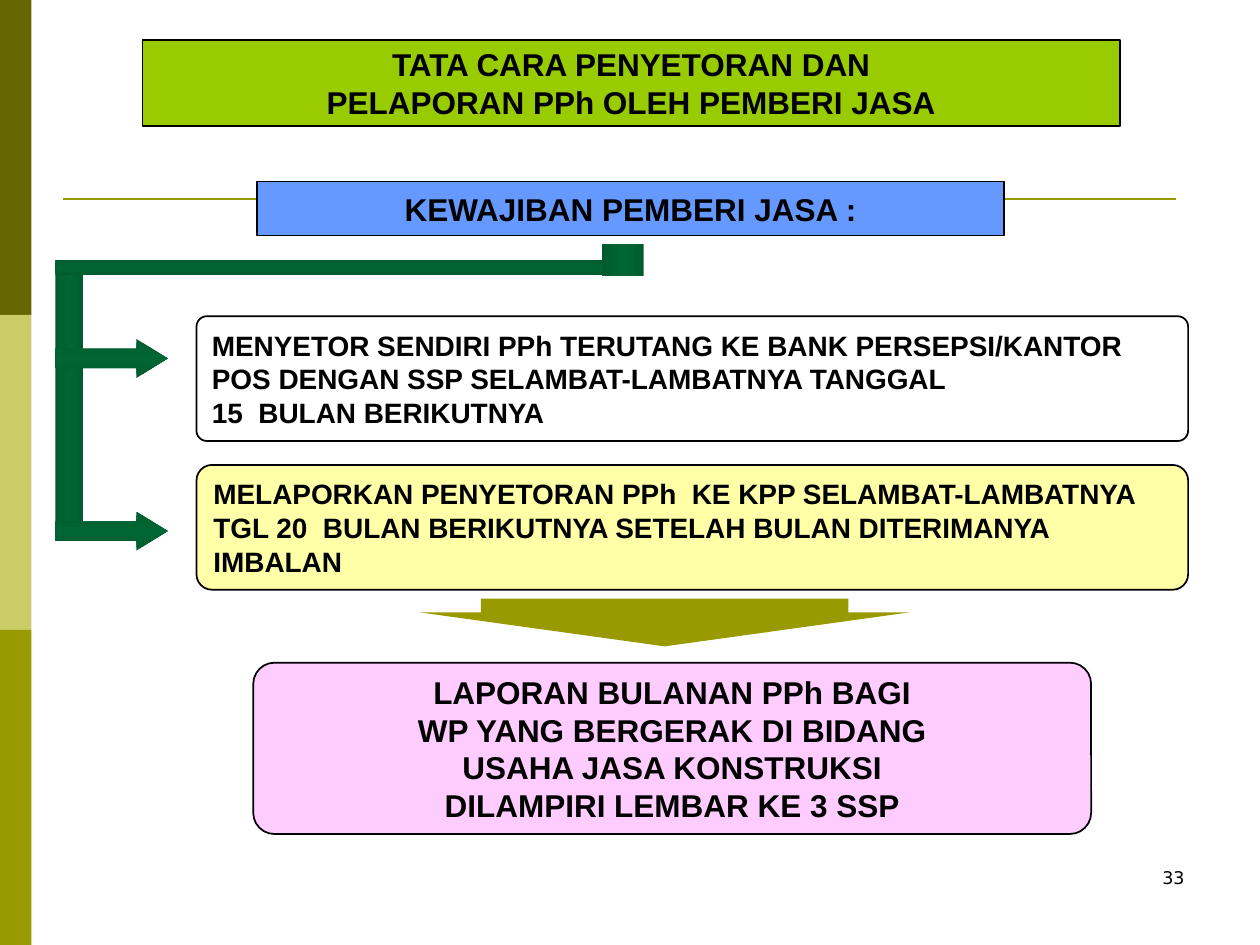
from copy import deepcopy

from lxml import etree
from pptx import Presentation
from pptx.dml.color import RGBColor
from pptx.enum.shapes import MSO_CONNECTOR, MSO_SHAPE
from pptx.enum.text import MSO_ANCHOR, MSO_AUTO_SIZE, PP_ALIGN
from pptx.oxml.ns import qn
from pptx.util import Inches, Pt

RECT = MSO_SHAPE.RECTANGLE
ROUNDED = MSO_SHAPE.ROUNDED_RECTANGLE
RIGHT_ARROW = MSO_SHAPE.RIGHT_ARROW
DOWN_ARROW = MSO_SHAPE.DOWN_ARROW
STRAIGHT = MSO_CONNECTOR.STRAIGHT
TOP, MIDDLE = MSO_ANCHOR.TOP, MSO_ANCHOR.MIDDLE
NO_AUTOFIT = MSO_AUTO_SIZE.NONE
LEFT, CENTER, RIGHT = PP_ALIGN.LEFT, PP_ALIGN.CENTER, PP_ALIGN.RIGHT

BLACK = RGBColor(0x00, 0x00, 0x00)
WHITE = RGBColor(0xFF, 0xFF, 0xFF)
DARK_OLIVE = RGBColor(0x66, 0x66, 0x00)
PALE_OLIVE = RGBColor(0xCC, 0xCC, 0x66)
OLIVE = RGBColor(0x99, 0x99, 0x00)
LIME = RGBColor(0x99, 0xCC, 0x00)
BLUE = RGBColor(0x66, 0x99, 0xFF)
YELLOW = RGBColor(0xFF, 0xFF, 0xA8)
PINK = RGBColor(0xFF, 0xCC, 0xFF)
GREEN_EDGE = RGBColor(0x00, 0x5C, 0x2E)
GREEN_MIDDLE = RGBColor(0x00, 0x66, 0x33)


class SlideBuilder:
    """Adds elements in the deck's style to one slide."""

    font = "Arial"
    number_font = "DejaVu Sans"

    def __init__(self, slide):
        self.slide = slide

    def set_text(self, shape, text, size, align, font=font, bold=True, anchor=MIDDLE):
        frame = shape.text_frame
        frame.text = text
        frame.word_wrap = True
        frame.auto_size = NO_AUTOFIT
        frame.vertical_anchor = anchor
        frame.margin_left = frame.margin_right = Inches(0.1)
        frame.margin_top = frame.margin_bottom = Inches(0.05)
        for paragraph in frame.paragraphs:
            paragraph.alignment = align
            for run in paragraph.runs:
                run.font.name = font
                run.font.size = Pt(size)
                run.font.bold = bold
                run.font.color.rgb = BLACK

    def fill_and_outline(self, shape, fill):
        shape.fill.solid()
        shape.fill.fore_color.rgb = fill
        shape.line.color.rgb = BLACK
        shape.line.width = Pt(1)

    def title(self, text, box, fill):
        title = self.slide.shapes.title
        title.left, title.top, title.width, title.height = map(Inches, box)
        self.fill_and_outline(title, fill)
        self.set_text(title, text, 18, CENTER)

    def plain(self, kind, box, fill=None, adjustments=(), parent=None):
        """Add a borderless shape to the parent group or to the slide."""
        shape = (parent or self.slide).shapes.add_shape(kind, *map(Inches, box))
        shape.shadow.inherit = False
        shape.line.fill.background()
        for index, value in enumerate(adjustments):
            shape.adjustments[index] = value
        if fill is not None:
            shape.fill.solid()
            shape.fill.fore_color.rgb = fill
        return shape

    def text_box(self, kind, box, fill, text, size, align, adjustments=()):
        shape = self.plain(kind, box, adjustments=adjustments)
        self.fill_and_outline(shape, fill)
        self.set_text(shape, text, size, align)

    def green_part(self, group, kind, box, angle, adjustments=()):
        """Add a bar or arrow that is lighter along its middle."""
        shape = self.plain(kind, box, adjustments=adjustments, parent=group)
        shape.fill.gradient()
        shape.fill.gradient_angle = angle
        stop_list = shape.element.spPr.find(qn("a:gradFill")).find(qn("a:gsLst"))
        stop_list.insert(1, deepcopy(stop_list[0]))
        stops = zip(shape.fill.gradient_stops, (0, 0.5, 1), (GREEN_EDGE, GREEN_MIDDLE, GREEN_EDGE))
        for stop, position, color in stops:
            stop.position = position
            stop.color.rgb = color

    def rule(self, start_x, end_x, y, color):
        line = self.slide.shapes.add_connector(
            STRAIGHT, Inches(start_x), Inches(y), Inches(end_x), Inches(y))
        line.line.color.rgb = color
        line.line.width = Pt(1.5)
        etree.SubElement(line.element.spPr, qn("a:effectLst"))

    def page_number(self, text, box):
        number = self.slide.shapes.add_textbox(*map(Inches, box))
        self.set_text(number, text, 10, RIGHT, self.number_font, False, TOP)


def main():
    deck = Presentation()
    deck.slide_width, deck.slide_height = Inches(10), Inches(7.5)
    title_only = deck.slide_layouts[5]
    builder = SlideBuilder(deck.slides.add_slide(title_only))

    for row, color in enumerate((DARK_OLIVE, PALE_OLIVE, OLIVE)):
        builder.plain(RECT, (0, row * 2.5, 0.25, 2.5), color)
    builder.rule(0.5, 9.33, 1.58, OLIVE)
    builder.page_number("33", (7.17, 6.83, 2.33, 0.5))

    duties = (
        (2.51, 0.083, WHITE,
         "MENYETOR SENDIRI PPh TERUTANG KE BANK PERSEPSI/KANTOR\n"
         "POS DENGAN SSP SELAMBAT-LAMBATNYA TANGGAL\n"
         "15  BULAN BERIKUTNYA"),
        (3.69, 0.124, YELLOW,
         "MELAPORKAN PENYETORAN PPh  KE KPP SELAMBAT-LAMBATNYA\n"
         "TGL 20  BULAN BERIKUTNYA SETELAH BULAN DITERIMANYA\n"
         "IMBALAN"),
    )
    for top, rounding, fill, duty in duties:
        builder.text_box(ROUNDED, (1.56, top, 7.87, 0.99), fill, duty, 16, LEFT, (rounding,))

    report = ("LAPORAN BULANAN PPh BAGI\nWP YANG BERGERAK DI BIDANG\n"
              "USAHA JASA KONSTRUKSI\nDILAMPIRI LEMBAR KE 3 SSP")
    builder.text_box(ROUNDED, (2.01, 5.26, 6.65, 1.36), PINK, report, 18, CENTER, (0.124,))
    builder.title("TATA CARA PENYETORAN DAN\nPELAPORAN PPh OLEH PEMBERI JASA",
                  (1.13, 0.32, 7.76, 0.68), LIME)
    builder.text_box(RECT, (2.04, 1.44, 5.93, 0.43), BLUE,
                     "KEWAJIBAN PEMBERI JASA :", 18, CENTER)

    branch = builder.slide.shapes.add_group_shape()
    builder.green_part(branch, RECT, (0.44, 2.06, 0.22, 2.19), 0)
    builder.green_part(branch, RECT, (0.44, 2.06, 4.56, 0.12), 90)
    for arrow_top in (2.69, 4.06):
        builder.green_part(branch, RIGHT_ARROW, (0.44, arrow_top, 0.89, 0.31), 90, (0.5, 0.8))
    builder.green_part(branch, RECT, (4.78, 1.94, 0.33, 0.25), 0)

    builder.plain(DOWN_ARROW, (3.33, 4.75, 3.89, 0.38), OLIVE, (0.75, 0.71))
    deck.save("out.pptx")


if __name__ == "__main__":
    main()
